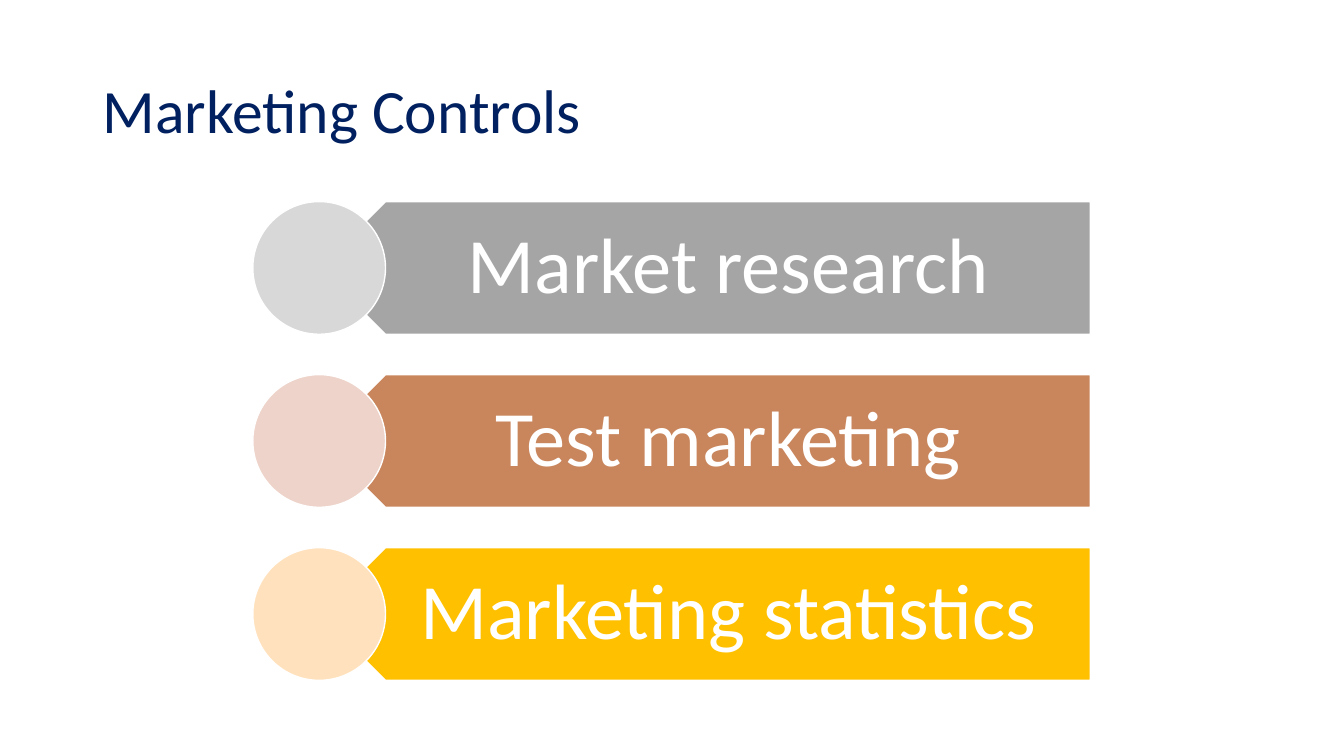
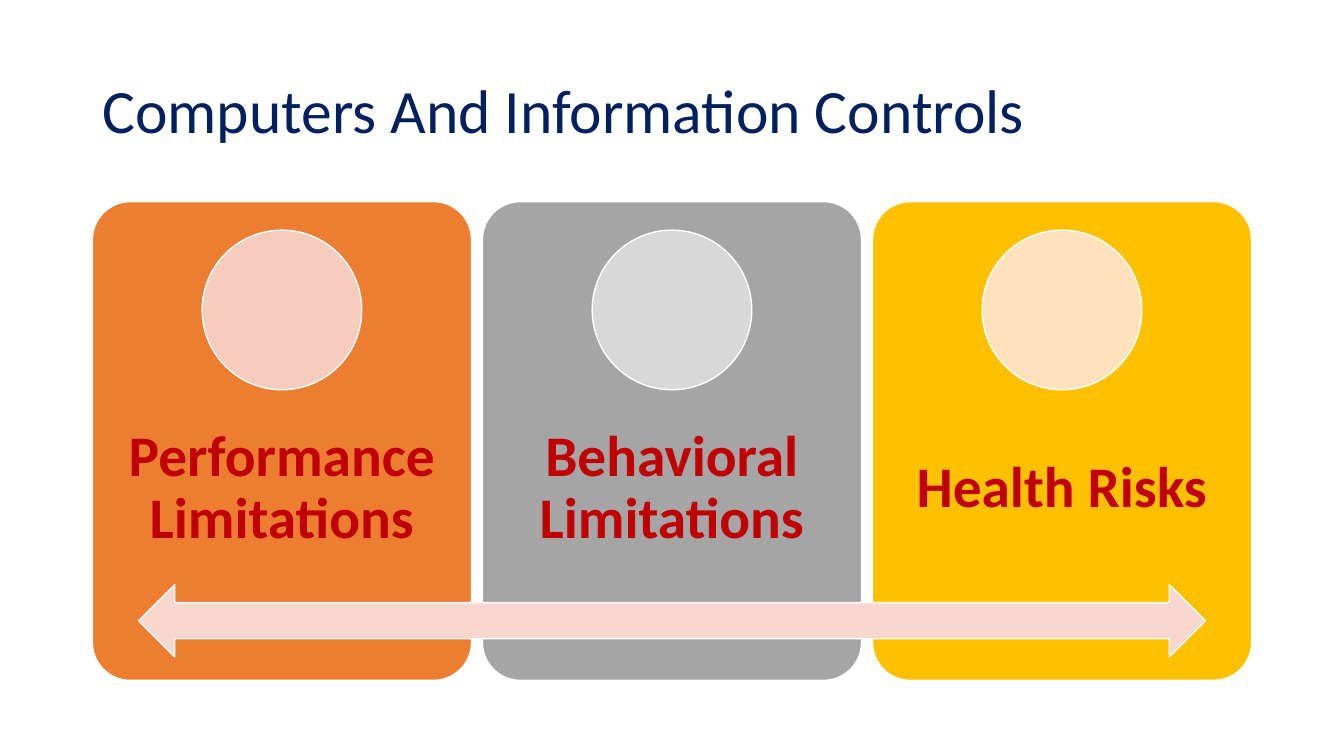
from dataclasses import dataclass

from pptx import Presentation
from pptx.dml.color import RGBColor
from pptx.enum.shapes import MSO_SHAPE
from pptx.enum.text import MSO_ANCHOR, PP_ALIGN
from pptx.util import Inches, Pt

ELLIPSE = MSO_SHAPE.OVAL
PENTAGON = MSO_SHAPE.PENTAGON
ROUNDED = MSO_SHAPE.ROUNDED_RECTANGLE
DOUBLE_ARROW = MSO_SHAPE.LEFT_RIGHT_ARROW
MIDDLE = MSO_ANCHOR.MIDDLE
LEFT, CENTER = PP_ALIGN.LEFT, PP_ALIGN.CENTER

COLUMNS, ROWS = 160, 90
CONTENT_LEFT, CONTENT_WIDTH = 11, 138
CONTENT_TOP, CONTENT_HEIGHT = 24, 57


@dataclass(frozen=True)
class Theme:
    font: str = "Calibri"
    navy: str = "002060"
    white: str = "FFFFFF"
    red: str = "C00000"
    orange: str = "ED7D31"
    pale_orange: str = "F6CCBE"
    gray: str = "A5A5A5"
    pale_gray: str = "D8D8D8"
    copper: str = "C9855C"
    pale_copper: str = "EDD3C9"
    gold: str = "FFC000"
    pale_gold: str = "FFE2BD"
    arrow: str = "F8D7CE"
    title_size: int = 44
    banner_size: int = 56
    card_size: int = 41
    line_width: int = 1
    line_spacing: float = 0.9


class Deck:
    def __init__(self, theme):
        self.theme = theme
        self.presentation = Presentation()
        self.presentation.slide_width = Inches(13.333)
        self.presentation.slide_height = Inches(7.5)
        self.slide = None

    def place(self, left, top, width, height):
        column = self.presentation.slide_width / COLUMNS
        row = self.presentation.slide_height / ROWS
        return (round(left * column), round(top * row),
                round(width * column), round(height * row))

    def add_slide(self, title):
        layout = self.presentation.slide_layouts[6]
        self.slide = self.presentation.slides.add_slide(layout)
        self.add_text(title, (CONTENT_LEFT, 4.8, CONTENT_WIDTH, 17.4),
                      self.theme.title_size, self.theme.navy, alignment=LEFT)

    def add_text(self, text, box, size, color, bold=False,
                 alignment=CENTER, insets=(1.2, 0.6, 1.2, 0.6)):
        shape = self.slide.shapes.add_textbox(*self.place(*box))
        frame = shape.text_frame
        frame.word_wrap = True
        frame.vertical_anchor = MIDDLE
        left, top, right, bottom = insets
        frame.margin_left, frame.margin_top, frame.margin_right, frame.margin_bottom = (
            self.place(left, top, right, bottom))
        frame.text = text
        paragraph = frame.paragraphs[0]
        paragraph.alignment = alignment
        paragraph.line_spacing = self.theme.line_spacing
        font = paragraph.runs[0].font
        font.name = self.theme.font
        font.size = Pt(size)
        font.bold = bold
        font.color.rgb = RGBColor.from_string(color)

    def add_shape(self, kind, box, fill):
        shape = self.slide.shapes.add_shape(kind, *self.place(*box))
        shape.shadow.inherit = False
        shape.fill.solid()
        shape.fill.fore_color.rgb = RGBColor.from_string(fill)
        shape.line.color.rgb = RGBColor.from_string(self.theme.white)
        shape.line.width = Pt(self.theme.line_width)
        return shape

    def add_banner(self, text, top, height, fill, pale):
        left, width = 38, 91.8
        pentagon = self.add_shape(PENTAGON, (left, top, width, height), fill)
        pentagon.rotation = 180
        self.add_text(text, (left + height / 4, top, width - height / 4, height),
                      self.theme.banner_size, self.theme.white,
                      insets=(7, 2.8, 5.3, 2.8))
        self.add_shape(ELLIPSE, (left - height / 2, top, height, height), pale)

    def add_card(self, text, left, width, fill, pale):
        card = self.add_shape(ROUNDED, (left, CONTENT_TOP, width, CONTENT_HEIGHT), fill)
        card.adjustments[0] = 0.1
        self.add_text(text, (left, 46.8, width, 22.8), self.theme.card_size,
                      self.theme.red, bold=True, insets=(3.8, 3.8, 3.8, 3.8))
        diameter = CONTENT_HEIGHT / 3
        self.add_shape(ELLIPSE, (left + (width - diameter) / 2, 27.4, diameter, diameter), pale)


def main():
    theme = Theme()
    deck = Deck(theme)

    deck.add_slide("Marketing Controls")
    banners = [
        ("Market research", theme.gray, theme.pale_gray),
        ("Test marketing", theme.copper, theme.pale_copper),
        ("Marketing statistics", theme.gold, theme.pale_gold),
    ]
    banner_height = 15.8
    banner_pitch = (CONTENT_HEIGHT - banner_height) / (len(banners) - 1)
    for index, (text, fill, pale) in enumerate(banners):
        deck.add_banner(text, CONTENT_TOP + index * banner_pitch, banner_height, fill, pale)

    deck.add_slide("Computers And Information Controls")
    cards = [
        ("Performance Limitations", theme.orange, theme.pale_orange),
        ("Behavioral Limitations", theme.gray, theme.pale_gray),
        ("Health Risks", theme.gold, theme.pale_gold),
    ]
    card_gap = 1.3
    card_pitch = (CONTENT_WIDTH + card_gap) / len(cards)
    for index, (text, fill, pale) in enumerate(cards):
        deck.add_card(text, CONTENT_LEFT + index * card_pitch, card_pitch - card_gap, fill, pale)
    deck.add_shape(DOUBLE_ARROW, (16.5, 69.6, 127, 8.6), theme.arrow)

    deck.presentation.save("out.pptx")


if __name__ == "__main__":
    main()
